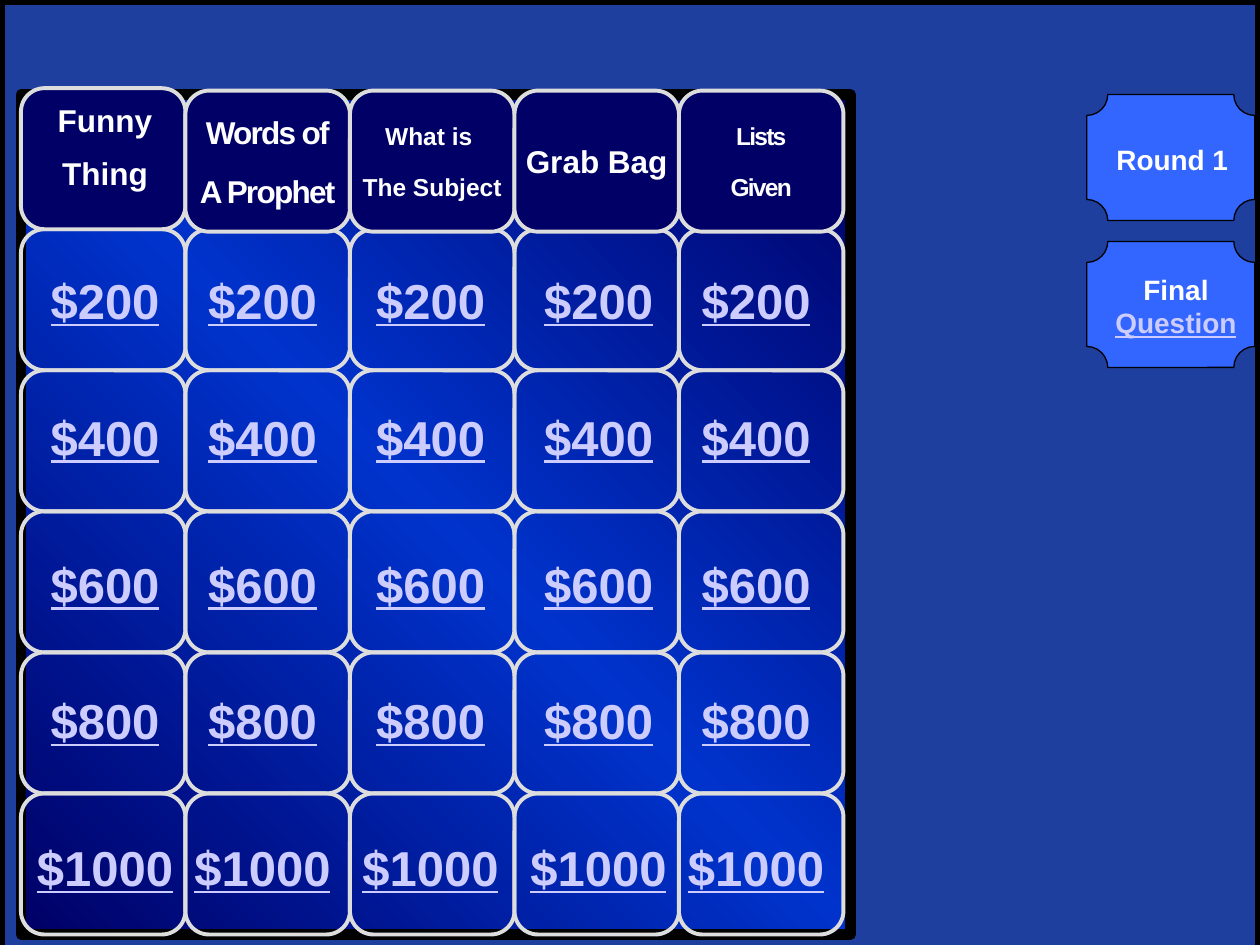
"""Build a quiz game board slide with five categories and five prize rows."""
from lxml import etree
from copy import deepcopy
from dataclasses import dataclass
from pptx import Presentation
from pptx.dml.color import RGBColor
from pptx.enum.shapes import MSO_SHAPE
from pptx.enum.text import MSO_ANCHOR, MSO_AUTO_SIZE, PP_ALIGN
from pptx.oxml.ns import qn
from pptx.util import Pt

RECT, ROUNDED, PLAQUE = MSO_SHAPE.RECTANGLE, MSO_SHAPE.ROUNDED_RECTANGLE, MSO_SHAPE.PLAQUE
CENTER, MIDDLE = PP_ALIGN.CENTER, MSO_ANCHOR.MIDDLE
GROW = MSO_AUTO_SIZE.SHAPE_TO_FIT_TEXT


@dataclass(frozen=True)
class Theme:
    font: str = "Arial"
    black: str = "000000"
    white: str = "FFFFFF"
    blue: str = "3366FF"
    navy: str = "000066"
    bright: str = "0033CC"
    grid: str = "DDDDDD"
    link: str = "CCCCFF"
    prize_size: int = 28
    button_size: int = 16


THEME = Theme()

FIRST_CATEGORY = ["Funny", "Thing"]
# lines, size, letter spacing in hundredths of a point
CATEGORIES = [
    (["Words of", "A Prophet"], 18, -100),
    (["What is ", "The Subject"], 14, 0),
    (["Grab Bag"], 18, 0),
    (["Lists", "Given"], 14, -100),
]
PRIZES = ["$200", "$400", "$600", "$800", "$1000"]
PRIZE_LEFTS = [12, 102, 198, 294, 384]
PRIZE_TOPS = [151.2, 229.2, 313.2, 391.2, 475.2]
BUTTONS = [
    ((621, 54, 96, 72), (620.6, 78, 98.6, 26.6), [("Round 1", False)]),
    ((621, 138, 96, 72), (627, 152, 90, 46), [("Final ", False), ("Question", True)]),
]
GRID_LEFT, GRID_TOP, CELL_W, CELL_H = 12, 131, 94, 80.6
FIRST_HEAD_TOP, HEAD_TOP = 50.4, 51.8


def rgb(value):
    return RGBColor.from_string(value)


def add_box(s, kind, box, fill, line, width):
    sp = s.shapes.add_shape(kind, *map(Pt, box))
    sp.shadow.inherit = False
    if fill:
        sp.fill.solid()
        sp.fill.fore_color.rgb = rgb(fill)
    else:
        sp.fill.background()
    sp.line.color.rgb = rgb(line)
    sp.line.width = Pt(width)
    return sp


def add_cell(s, col, top, fill=None):
    box = (GRID_LEFT + col * CELL_W, top, CELL_W, CELL_H)
    return add_box(s, ROUNDED, box, fill, THEME.grid, 2.25)


def style(font, size, color, underline=False):
    font.name, font.size, font.bold = THEME.font, Pt(size), True
    font.color.rgb = rgb(color)
    if underline:
        font.underline = True


def set_gradient(sp, colors):
    sp.fill.gradient()
    sp.fill.gradient_angle = 45
    stops = sp._element.spPr.find(qn("a:gradFill")).find(qn("a:gsLst"))
    stops.append(deepcopy(stops[-1]))
    for i, (stop, color) in enumerate(zip(sp.fill.gradient_stops, colors)):
        stop.position = i / (len(colors) - 1)
        stop.color.rgb = rgb(color)


def add_label(s, box, lines, size, color=THEME.white, underline=False):
    tf = s.shapes.add_textbox(*map(Pt, box)).text_frame
    tf.word_wrap = True
    tf.auto_size = GROW
    tf.text = "\n".join(lines)
    for p in tf.paragraphs:
        p.alignment = CENTER
        before = etree.SubElement(p._p.get_or_add_pPr(), qn("a:spcBef"))
        etree.SubElement(before, qn("a:spcPct"), val="50000")
        style(p.font, size, color, underline)
    return tf


def add_heading(s, col, lines, size, spacing):
    tf = add_cell(s, col, HEAD_TOP, THEME.navy).text_frame
    tf.word_wrap = False
    tf.vertical_anchor = MIDDLE
    tf.text = "\n".join(lines)
    for p in tf.paragraphs:
        p.alignment = CENTER
        if len(lines) > 1:
            p.space_after = Pt(12)
        style(p.font, size, THEME.white)
        if spacing:
            for r in p.runs:
                r._r.get_or_add_rPr().set("spc", str(spacing))


def add_backdrop(s):
    add_box(s, RECT, (0, 0, 720, 540), THEME.black, THEME.black, 0.75)
    veil = add_box(s, RECT, (0, 0, 720, 546), THEME.blue, THEME.black, 6)
    color = veil._element.spPr.find(qn("a:solidFill")).find(qn("a:srgbClr"))
    etree.SubElement(color, qn("a:alpha"), val="62000")
    board = add_box(s, RECT, (12, 54, 474, 480), None, THEME.black, 6)
    set_gradient(board, [THEME.navy, THEME.bright, THEME.navy])


def add_board(s):
    for col in range(len(PRIZE_LEFTS)):
        for row in range(len(PRIZES)):
            add_cell(s, col, GRID_TOP + row * CELL_H)
    add_cell(s, 0, FIRST_HEAD_TOP, THEME.navy)
    for col, category in enumerate(CATEGORIES, start=1):
        add_heading(s, col, *category)
    add_label(s, (18, 54, 84, 62), FIRST_CATEGORY, 18)
    for prize, top in zip(PRIZES, PRIZE_TOPS):
        for left in PRIZE_LEFTS:
            add_label(s, (left, top, 96, 41), [prize], THEME.prize_size, THEME.link, True)


def add_buttons(s):
    for plaque, label, parts in BUTTONS:
        add_box(s, PLAQUE, plaque, THEME.blue, THEME.black, 0.75)
        p = add_label(s, label, [""], THEME.button_size).paragraphs[0]
        for text, linked in parts:
            r = p.add_run()
            r.text = text
            if linked:
                style(r.font, THEME.button_size, THEME.link, True)


def main():
    prs = Presentation()
    prs.slide_width, prs.slide_height = Pt(720), Pt(540)
    s = prs.slides.add_slide(prs.slide_layouts[6])
    add_backdrop(s)
    add_board(s)
    add_buttons(s)
    prs.save("out.pptx")


if __name__ == "__main__":
    main()
